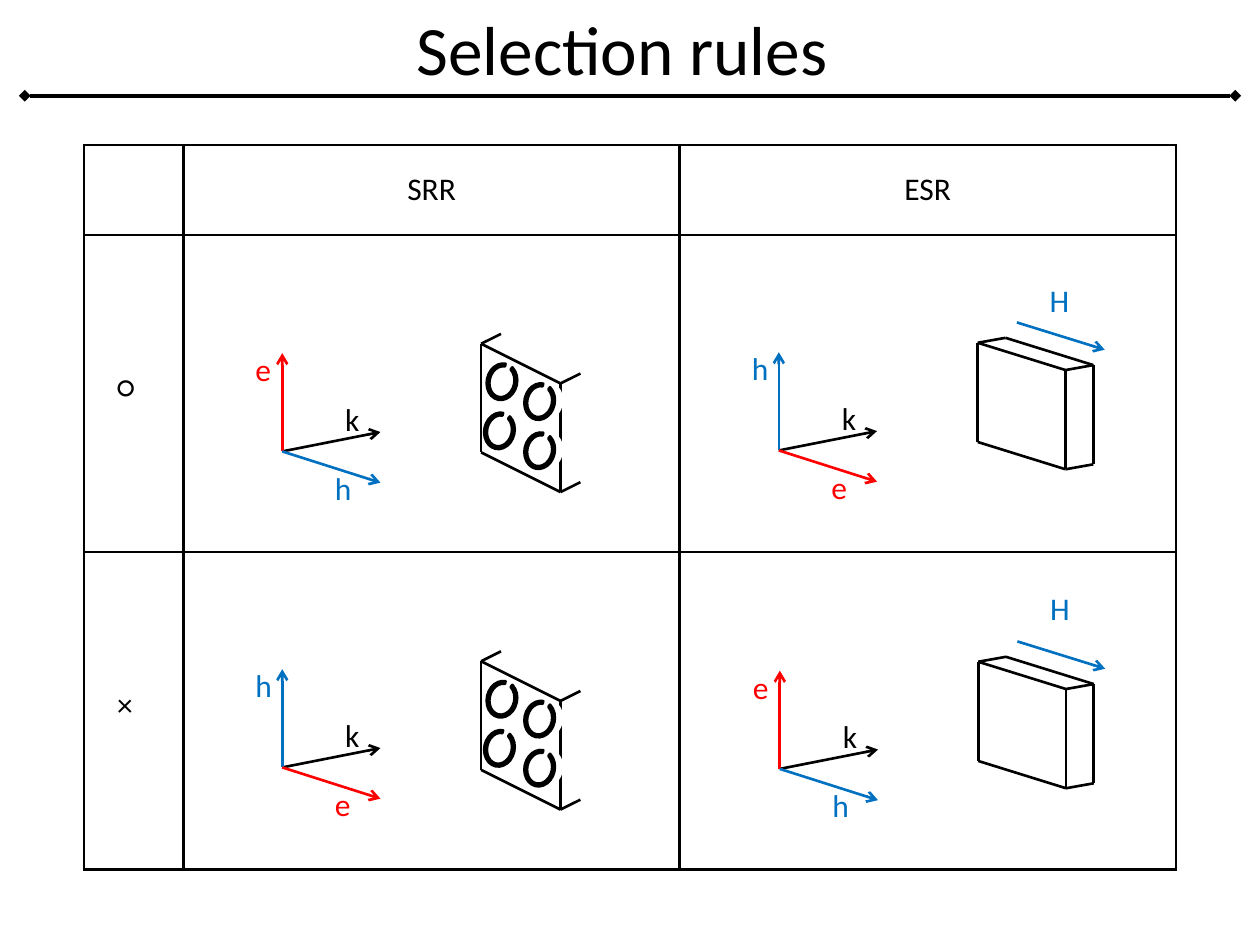
from dataclasses import dataclass
from typing import Optional

from lxml.etree import SubElement
from pptx import Presentation
from pptx.dml.color import RGBColor
from pptx.enum.shapes import MSO_CONNECTOR, MSO_SHAPE
from pptx.enum.text import MSO_ANCHOR, MSO_AUTO_SIZE, PP_ALIGN
from pptx.oxml import parse_xml
from pptx.oxml.ns import nsdecls, qn
from pptx.util import Cm, Pt


@dataclass(frozen=True)
class Theme:
    black: str = "000000"
    white: str = "FFFFFF"
    electric: str = "FF0000"
    magnetic: str = "0070C0"
    font: str = "Calibri"
    title_size: float = 39.6
    text_size: float = 18
    line_width: float = 1.5
    rule_width: float = 2.25


THEME = Theme()
FIELD_COLOURS = {"e": THEME.electric, "h": THEME.magnetic}


@dataclass(frozen=True)
class Point:
    """A place or a step on the slide, in centimetres."""
    x: float
    y: float

    def __add__(self, other: "Point") -> "Point":
        return Point(self.x + other.x, self.y + other.y)


@dataclass(frozen=True)
class Panel:
    """One cell: the field axes and the sample beside them."""
    axes: Point
    upward: str
    sideways: str
    sample: Point
    static_field_label: Optional[Point] = None  # only slabs have one


PANELS = [
    Panel(Point(5.69, 9.1), "e", "h", Point(9.7, 6.93)),
    Panel(Point(5.69, 15.47), "h", "e", Point(9.7, 13.33)),
    Panel(Point(15.7, 9.08), "h", "e", Point(19.71, 6.91), Point(1.2, -1.37)),
    Panel(Point(15.72, 15.5), "e", "h", Point(19.72, 13.34), Point(1.2, -1.6)),
]

GRID_ORIGIN = Point(1.7, 2.93)
COLUMN_WIDTHS = [2, 10, 10]
ROW_HEIGHTS = [1.8, 6.4, 6.4]
TABLE_TEXT = [["", "SRR", "ESR"], ["○", "", ""], ["×", "", ""]]
RING_PLACES = [Point(0.81, 0.86), Point(0.81, 1.85), Point(0.05, 0.46), Point(0, 1.45)]


def write_text(text_frame, text: str, *, size: float = THEME.text_size,
               colour: str = THEME.black, align=PP_ALIGN.LEFT) -> None:
    paragraph = text_frame.paragraphs[0]
    paragraph.alignment = align
    run = paragraph.add_run()
    run.text = text
    run.font.name = THEME.font
    run.font.size = Pt(size)
    run.font.color.rgb = RGBColor.from_string(colour)


def add_label(slide, place: Point, text: str, colour: str = THEME.black) -> None:
    text_box = slide.shapes.add_textbox(Cm(place.x), Cm(place.y), Cm(1.2), Cm(1.02))
    text_box.text_frame.word_wrap = True
    text_box.text_frame.auto_size = MSO_AUTO_SIZE.SHAPE_TO_FIT_TEXT
    write_text(text_box.text_frame, text, colour=colour)


def add_line(slide, start: Point, step: Point, *, colour: str = THEME.black,
             width: float = THEME.line_width, head: str = "", tail: str = "") -> None:
    end = start + step
    connector = slide.shapes.add_connector(
        MSO_CONNECTOR.STRAIGHT, Cm(start.x), Cm(start.y), Cm(end.x), Cm(end.y))
    connector.line.color.rgb = RGBColor.from_string(colour)
    connector.line.width = Pt(width)
    line = connector.line._get_or_add_ln()
    for tag, kind in (("a:headEnd", head), ("a:tailEnd", tail)):
        if kind:
            SubElement(line, qn(tag), type=kind)
    SubElement(connector._element.spPr, qn("a:effectLst"))


def add_title(slide) -> None:
    add_line(slide, Point(0.5, 1.93), Point(24.4, 0), width=THEME.rule_width,
             head="diamond", tail="diamond")
    title = slide.shapes.title
    title.left, title.top, title.width, title.height = Cm(0), Cm(0), Cm(25.4), Cm(1.93)
    title.text_frame.vertical_anchor = MSO_ANCHOR.MIDDLE
    write_text(title.text_frame, "Selection rules ", size=THEME.title_size,
               align=PP_ALIGN.CENTER)


def add_borders(cell) -> None:
    properties = cell._tc.get_or_add_tcPr()
    for index, side in enumerate(("lnL", "lnR", "lnT", "lnB")):
        properties.insert(index, parse_xml(
            f'<a:{side} {nsdecls("a")} w="{Pt(THEME.line_width)}"><a:solidFill>'
            f'<a:srgbClr val="{THEME.black}"/></a:solidFill></a:{side}>'))


def add_rules_table(slide) -> None:
    table = slide.shapes.add_table(
        len(ROW_HEIGHTS), len(COLUMN_WIDTHS), Cm(GRID_ORIGIN.x), Cm(GRID_ORIGIN.y),
        Cm(sum(COLUMN_WIDTHS)), Cm(sum(ROW_HEIGHTS))).table
    table.first_row = table.horz_banding = False
    for column, width in zip(table.columns, COLUMN_WIDTHS):
        column.width = Cm(width)
    for row, height, texts in zip(table.rows, ROW_HEIGHTS, TABLE_TEXT):
        row.height = Cm(height)
        for index, (cell, text) in enumerate(zip(row.cells, texts)):
            cell.fill.background()
            add_borders(cell)
            cell.vertical_anchor = MSO_ANCHOR.MIDDLE
            if text:
                write_text(cell.text_frame, text,
                           align=PP_ALIGN.CENTER if index else PP_ALIGN.LEFT)
            if index == 0:
                cell.margin_left, cell.margin_bottom = Cm(0.66), Cm(0.35)


def add_axes(slide, panel: Panel) -> None:
    axes = [
        ("k", Point(1.98, -0.39), Point(1.02, -1.17)),
        (panel.upward, Point(0, -1.98), Point(-0.79, -2.16)),
        (panel.sideways, Point(1.98, 0.63), Point(0.81, 0.23)),
    ]
    for name, step, label_offset in axes:
        colour = FIELD_COLOURS.get(name, THEME.black)
        add_line(slide, panel.axes, step, colour=colour, tail="arrow")
        add_label(slide, panel.axes + label_offset, name, colour)


def add_front_face(slide, corner: Point, down: Point, across: Point) -> None:
    for start, step in ((corner, down), (corner + across, down),
                        (corner, across), (corner + down, across)):
        add_line(slide, start, step)


def add_ring(slide, place: Point) -> None:
    ring = slide.shapes.add_shape(
        MSO_SHAPE.BLOCK_ARC, Cm(place.x), Cm(place.y), Cm(0.74), Cm(0.61))
    ring.rotation = 282.4
    for index, value in enumerate((14.01, 215.32, 0.09)):
        ring.adjustments[index] = value
    ring.fill.background()
    ring.line.color.rgb = RGBColor.from_string(THEME.black)
    ring.line.width = Pt(THEME.line_width)
    # White shadow to the right of the ring
    ring.shadow.inherit = False
    effects = ring._element.spPr.find(qn("a:effectLst"))
    shadow = SubElement(effects, qn("a:outerShdw"), dist=str(Pt(4)), dir="0")
    SubElement(shadow, qn("a:srgbClr"), val=THEME.white)


def add_ring_array(slide, corner: Point) -> None:
    down, across, depth = Point(0, 2.19), Point(1.6, 0.8), Point(0.4, -0.2)
    add_front_face(slide, corner, down, across)
    for start in (corner, corner + across, corner + across + down):
        add_line(slide, start, depth)
    for place in RING_PLACES:
        add_ring(slide, corner + place)


def add_slab(slide, corner: Point, label_offset: Point) -> None:
    down, across, depth = Point(0, 2), Point(1.77, 0.55), Point(0.56, -0.1)
    add_front_face(slide, corner, down, across)
    for start in (corner, corner + across, corner + across + down):
        add_line(slide, start, depth)
    add_line(slide, corner + depth, across)
    add_line(slide, corner + depth + across, down)
    # Static field above the slab
    add_line(slide, corner + Point(0.79, -0.41), across,
             colour=THEME.magnetic, tail="arrow")
    add_label(slide, corner + label_offset, "H", THEME.magnetic)


def main() -> None:
    presentation = Presentation()
    presentation.slide_width, presentation.slide_height = Cm(25.4), Cm(19.05)
    slide = presentation.slides.add_slide(presentation.slide_layouts[5])
    add_title(slide)
    add_rules_table(slide)
    for panel in PANELS:
        if panel.static_field_label:
            add_slab(slide, panel.sample, panel.static_field_label)
        else:
            add_ring_array(slide, panel.sample)
        add_axes(slide, panel)
    presentation.save("out.pptx")


if __name__ == "__main__":
    main()
